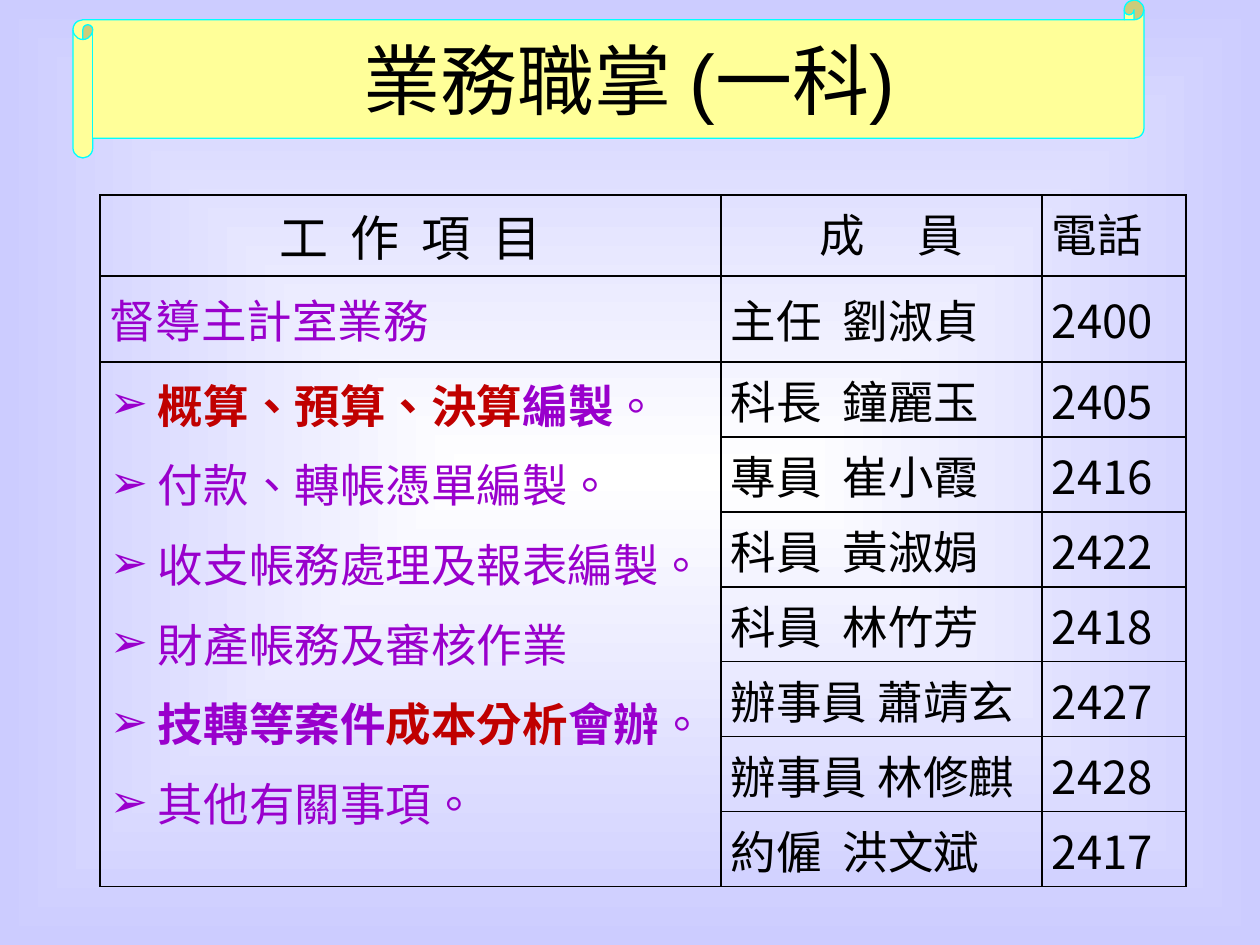
from dataclasses import dataclass
from typing import Optional

import pptx
import pptx.dml.color
import pptx.enum.shapes
import pptx.enum.text
import pptx.oxml
import pptx.oxml.ns
import pptx.util

ALIGN = pptx.enum.text.PP_ALIGN
ANCHOR = pptx.enum.text.MSO_ANCHOR
NS = pptx.oxml.ns.nsdecls("a")


@dataclass(frozen=True)
class Theme:
    black: str = "000000"
    purple: str = "9900CC"
    red: str = "C00000"
    banner: str = "FFFF99"
    banner_edge: str = "00FFFF"
    glow: str = "FFFFFF"
    backdrop: str = "CCCCFF"
    title: int = 44
    heading: int = 28
    body: int = 26
    title_font: str = "Arial"
    text_font: str = "Calibri"
    cjk_font: str = "Noto Sans CJK SC"


THEME = Theme()


@dataclass(frozen=True)
class Span:
    text: str
    color: str = THEME.black
    size: int = THEME.body
    bold: bool = False
    font: str = THEME.text_font
    tracking: float = 0


@dataclass(frozen=True)
class Member:
    post: str
    name: str
    phone: str
    gap: float = 5.9


MEMBERS = [
    Member("主任", "劉淑貞", "2400"),
    Member("科長", "鐘麗玉", "2405"),
    Member("專員", "崔小霞", "2416"),
    Member("科員", "黃淑娟", "2422"),
    Member("科員", "林竹芳", "2418"),
    Member("辦事員", "蕭靖玄", "2427", 0),
    Member("辦事員", "林修麒", "2428", 0),
    Member("約僱", "洪文斌", "2417"),
]
DUTIES = [
    [Span("概算、預算、決算", THEME.red, bold=True),
     Span("編製", THEME.purple, bold=True), Span("。", THEME.purple)],
    [Span("付款、轉帳憑單編製。", THEME.purple)],
    [Span("收支帳務處理及報表編製。", THEME.purple)],
    [Span("財產帳務及審核作業", THEME.purple)],
    [Span("技轉等案件", THEME.purple, bold=True),
     Span("成本分析", THEME.red, bold=True),
     Span("會辦", THEME.purple, bold=True), Span("。", THEME.purple)],
    [Span("其他有關事項。", THEME.purple)],
]
COLUMN_WIDTHS = [621, 321, 144]
ROW_HEIGHTS = [81, 86] + [75] * 7


def px(length: int) -> int:
    return round(length * 914400 / 126)


def rgb(color: str) -> pptx.dml.color.RGBColor:
    return pptx.dml.color.RGBColor.from_string(color)


def add_spans(paragraph, spans: list[Span], align=ALIGN.LEFT) -> None:
    paragraph.alignment = align
    for span in spans:
        run = paragraph.add_run()
        run.text = span.text
        run.font.size = pptx.util.Pt(span.size)
        run.font.bold = span.bold
        run.font.name = span.font
        run.font.color.rgb = rgb(span.color)
        properties = run._r.get_or_add_rPr()
        properties.set("lang", "zh-TW")
        if span.tracking:
            properties.set("spc", str(round(span.tracking * 100)))
        properties.append(pptx.oxml.parse_xml(
            f'<a:ea {NS} typeface="{THEME.cjk_font}"/>'))


def add_bullet(paragraph) -> None:
    paragraph.line_spacing = 1.05
    paragraph.space_after = pptx.util.Pt(6)
    properties = paragraph._p.get_or_add_pPr()
    properties.set("marL", str(px(48)))
    properties.set("indent", str(-px(48)))
    for bullet in (
        f'<a:buClr {NS}><a:srgbClr val="{THEME.purple}"/></a:buClr>',
        f'<a:buFont {NS} typeface="{THEME.title_font}"/>',
        f'<a:buChar {NS} char="➢"/>',
    ):
        properties.append(pptx.oxml.parse_xml(bullet))


def style_cell(cell) -> None:
    cell.margin_left = cell.margin_right = px(10)
    cell.margin_top = cell.margin_bottom = px(5)
    properties = cell._tc.get_or_add_tcPr()
    for side in ("lnL", "lnR", "lnT", "lnB"):
        properties.append(pptx.oxml.parse_xml(
            f'<a:{side} {NS} w="12700"><a:solidFill>'
            f'<a:srgbClr val="{THEME.black}"/></a:solidFill></a:{side}>'))
    cell.fill.background()


def fill_cell(cell, spans: list[Span], align=ALIGN.LEFT,
              anchor: Optional[ANCHOR] = ANCHOR.MIDDLE) -> None:
    cell.vertical_anchor = anchor
    add_spans(cell.text_frame.paragraphs[0], spans, align)


def paint_background(slide) -> None:
    fill = slide.background.fill
    fill.gradient()
    for stop, color in zip(fill.gradient_stops, (THEME.glow, THEME.backdrop)):
        stop.color.rgb = rgb(color)
    gradient = slide._element.find(".//" + pptx.oxml.ns.qn("a:gradFill"))
    gradient.remove(gradient.find(pptx.oxml.ns.qn("a:lin")))
    gradient.append(pptx.oxml.parse_xml(
        f'<a:path {NS} path="shape"><a:fillToRect l="50000" t="50000" '
        'r="50000" b="50000"/></a:path>'))


def add_title(slide) -> None:
    scroll = slide.shapes.add_shape(
        pptx.enum.shapes.MSO_SHAPE.HORIZONTAL_SCROLL,
        px(73), 0, px(1071), px(158))
    scroll.shadow.inherit = False
    scroll.fill.solid()
    scroll.fill.fore_color.rgb = rgb(THEME.banner)
    scroll.line.color.rgb = rgb(THEME.banner_edge)
    scroll.line.width = pptx.util.Pt(0.75)
    title = slide.shapes.add_textbox(px(94), 0, px(1071), px(158)).text_frame
    title.word_wrap = True
    title.vertical_anchor = ANCHOR.MIDDLE
    add_spans(title.paragraphs[0], [Span(
        "業務職掌 (一科)", size=THEME.title, font=THEME.title_font)], ALIGN.CENTER)


def add_roster(slide) -> None:
    roster = slide.shapes.add_table(
        len(ROW_HEIGHTS), len(COLUMN_WIDTHS), px(100), px(195),
        px(sum(COLUMN_WIDTHS)), px(sum(ROW_HEIGHTS))).table
    roster.first_row = roster.horz_banding = False
    for column, width in zip(roster.columns, COLUMN_WIDTHS):
        column.width = px(width)
    for row, height in zip(roster.rows, ROW_HEIGHTS):
        row.height = px(height)
    for cell in roster.iter_cells():
        style_cell(cell)

    fill_cell(roster.cell(0, 0), [Span(
        "工 作 項 目", size=THEME.heading, tracking=3.2)], ALIGN.CENTER, ANCHOR.TOP)
    fill_cell(roster.cell(0, 1), [
        Span("成"), Span(" ", tracking=24), Span("員")], ALIGN.CENTER, ANCHOR.TOP)
    roster.cell(0, 1).margin_left = px(30)
    fill_cell(roster.cell(0, 2), [Span("電話")], anchor=ANCHOR.TOP)
    fill_cell(roster.cell(1, 0), [Span("督導主計室業務", THEME.purple)])
    for row, member in enumerate(MEMBERS, start=1):
        fill_cell(roster.cell(row, 1), [
            Span(member.post), Span(" ", tracking=member.gap), Span(member.name)])
        fill_cell(roster.cell(row, 2), [Span(member.phone, font=THEME.cjk_font)])

    duties = roster.cell(2, 0)
    duties.merge(roster.cell(len(ROW_HEIGHTS) - 1, 0))
    duties.vertical_anchor = ANCHOR.TOP
    for index, duty in enumerate(DUTIES):
        frame = duties.text_frame
        paragraph = frame.add_paragraph() if index else frame.paragraphs[0]
        add_bullet(paragraph)
        add_spans(paragraph, duty, ALIGN.JUSTIFY)


def main() -> None:
    deck = pptx.Presentation()
    deck.slide_width, deck.slide_height = px(1260), px(945)
    slide = deck.slides.add_slide(deck.slide_layouts[6])
    paint_background(slide)
    add_title(slide)
    add_roster(slide)
    deck.save("out.pptx")


if __name__ == "__main__":
    main()
